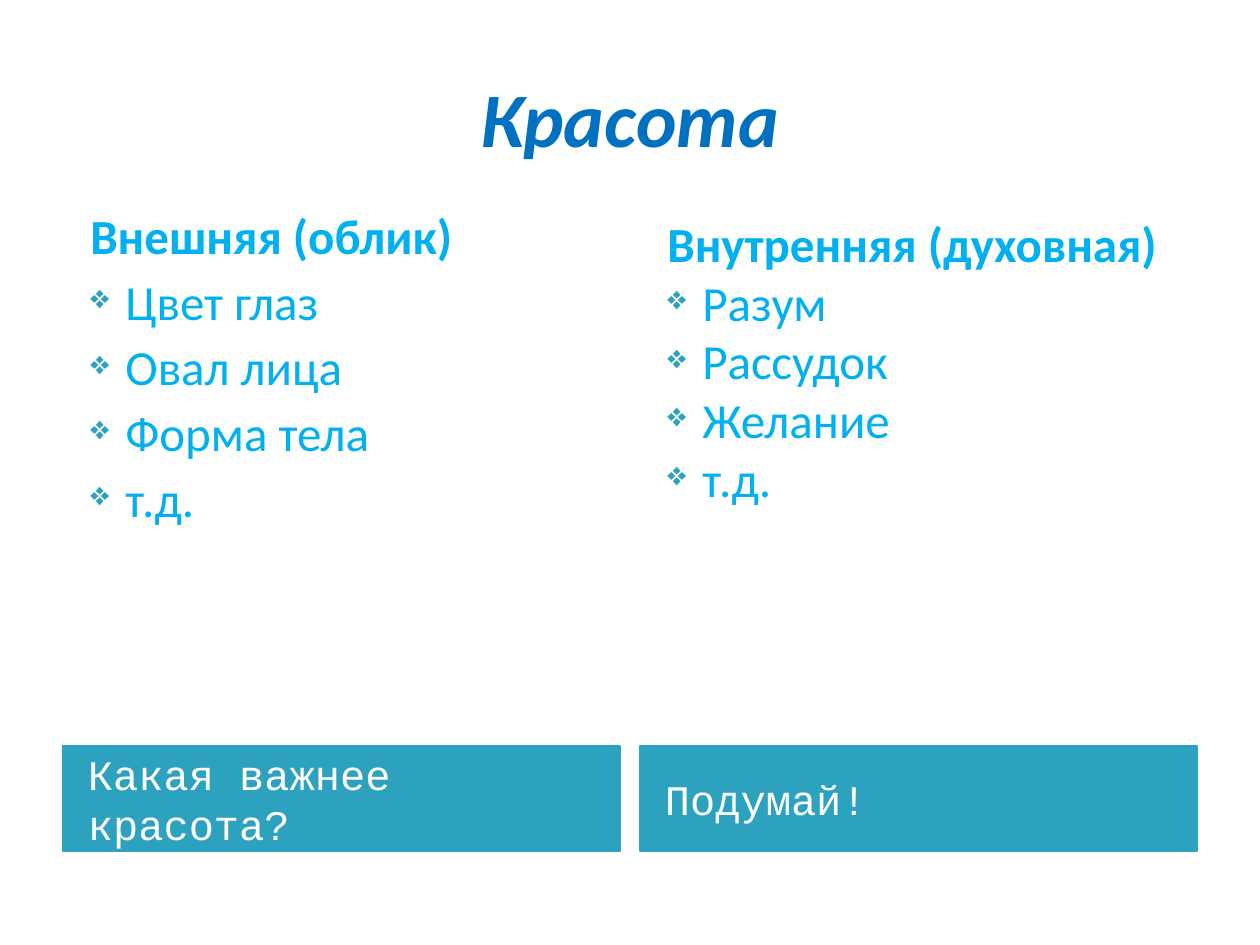
"""Build a slide that compares outer and inner beauty."""
from dataclasses import dataclass

from lxml.etree import SubElement
from pptx import Presentation
from pptx.dml.color import RGBColor
from pptx.enum.shapes import MSO_SHAPE
from pptx.enum.text import MSO_ANCHOR, PP_ALIGN
from pptx.oxml.ns import qn
from pptx.util import Emu, Pt

PIXELS_PER_INCH = 126
TITLE_BLUE = RGBColor(0x00, 0x70, 0xC0)
TEXT_BLUE = RGBColor(0x00, 0xB0, 0xF0)
TEAL = RGBColor(0x2D, 0xA2, 0xBF)
WHITE = RGBColor(0xFF, 0xFF, 0xFF)

MARGIN = 63
COLUMN_WIDTH = 557
COLUMN_LEFTS = (MARGIN, 640)
COLUMN_HEIGHT = 543
BANNER_TOP = 746
BANNER_HEIGHT = 105


@dataclass(frozen=True)
class Column:
    left: int
    top: int
    spacing: int
    heading: str
    items: tuple[str, ...]
    banner: str


COLUMNS = (
    Column(COLUMN_LEFTS[0], 199, 4, "Внешняя (облик)",
           ("Цвет глаз", "Овал лица", "Форма тела", "т.д."), "Какая важнее красота?"),
    Column(COLUMN_LEFTS[1], 207, 0, "Внутренняя (духовная)",
           ("Разум", "Рассудок", "Желание", "т.д."), "Подумай!"),
)


def px(length: int) -> Emu:
    return Emu(round(length * 914400 / PIXELS_PER_INCH))


def style_text(paragraph, font_name: str, size: int, color: RGBColor,
               bold: bool = False, italic: bool = False) -> None:
    for run in paragraph.runs:
        run.font.name = font_name
        run.font.size = Pt(size)
        run.font.color.rgb = color
        run.font.bold = bold
        run.font.italic = italic


def set_indent(paragraph, bulleted: bool) -> None:
    properties = paragraph._p.get_or_add_pPr()
    properties.set("marL", str(px(50)))
    properties.set("indent", str(-px(35)))
    if bulleted:
        color = SubElement(properties, qn("a:buClr"))
        SubElement(color, qn("a:srgbClr"), val=str(TEAL))
        SubElement(properties, qn("a:buSzPct"), val="68000")
        SubElement(properties, qn("a:buChar"), char="❖")
    else:
        SubElement(properties, qn("a:buNone"))


def add_title(slide, text: str) -> None:
    shape = slide.shapes.add_textbox(px(MARGIN), px(38), px(1134), px(158))
    text_frame = shape.text_frame
    text_frame.word_wrap = True
    text_frame.vertical_anchor = MSO_ANCHOR.MIDDLE
    text_frame.text = text
    paragraph = text_frame.paragraphs[0]
    paragraph.alignment = PP_ALIGN.CENTER
    style_text(paragraph, "Calibri", 44, TITLE_BLUE, bold=True, italic=True)


def add_banner(slide, column: Column) -> None:
    shape = slide.shapes.add_shape(MSO_SHAPE.RECTANGLE, px(column.left), px(BANNER_TOP),
                                   px(COLUMN_WIDTH), px(BANNER_HEIGHT))
    shape.shadow.inherit = False
    shape.fill.solid()
    shape.fill.fore_color.rgb = TEAL
    shape.line.color.rgb = TEAL
    shape.line.width = Pt(0.75)
    text_frame = shape.text_frame
    text_frame.word_wrap = True
    text_frame.vertical_anchor = MSO_ANCHOR.MIDDLE
    text_frame.margin_left = px(25)
    text_frame.text = column.banner
    paragraph = text_frame.paragraphs[0]
    paragraph.alignment = PP_ALIGN.LEFT
    style_text(paragraph, "Courier New", 24, WHITE)


def add_list(slide, column: Column) -> None:
    shape = slide.shapes.add_textbox(px(column.left), px(column.top),
                                     px(COLUMN_WIDTH), px(COLUMN_HEIGHT))
    text_frame = shape.text_frame
    text_frame.word_wrap = True
    text_frame.text = "\n".join((column.heading, *column.items))
    for index, paragraph in enumerate(text_frame.paragraphs):
        is_item = index > 0
        set_indent(paragraph, bulleted=is_item)
        if is_item:
            paragraph.space_before = Pt(column.spacing)
        style_text(paragraph, "Calibri", 28, TEXT_BLUE, bold=not is_item)


def main() -> None:
    presentation = Presentation()
    presentation.slide_width = px(1260)
    presentation.slide_height = px(945)
    slide = presentation.slides.add_slide(presentation.slide_layouts[6])
    add_title(slide, "Красота")
    for column in COLUMNS:
        add_banner(slide, column)
    for column in COLUMNS:
        add_list(slide, column)
    presentation.save("out.pptx")


if __name__ == "__main__":
    main()
